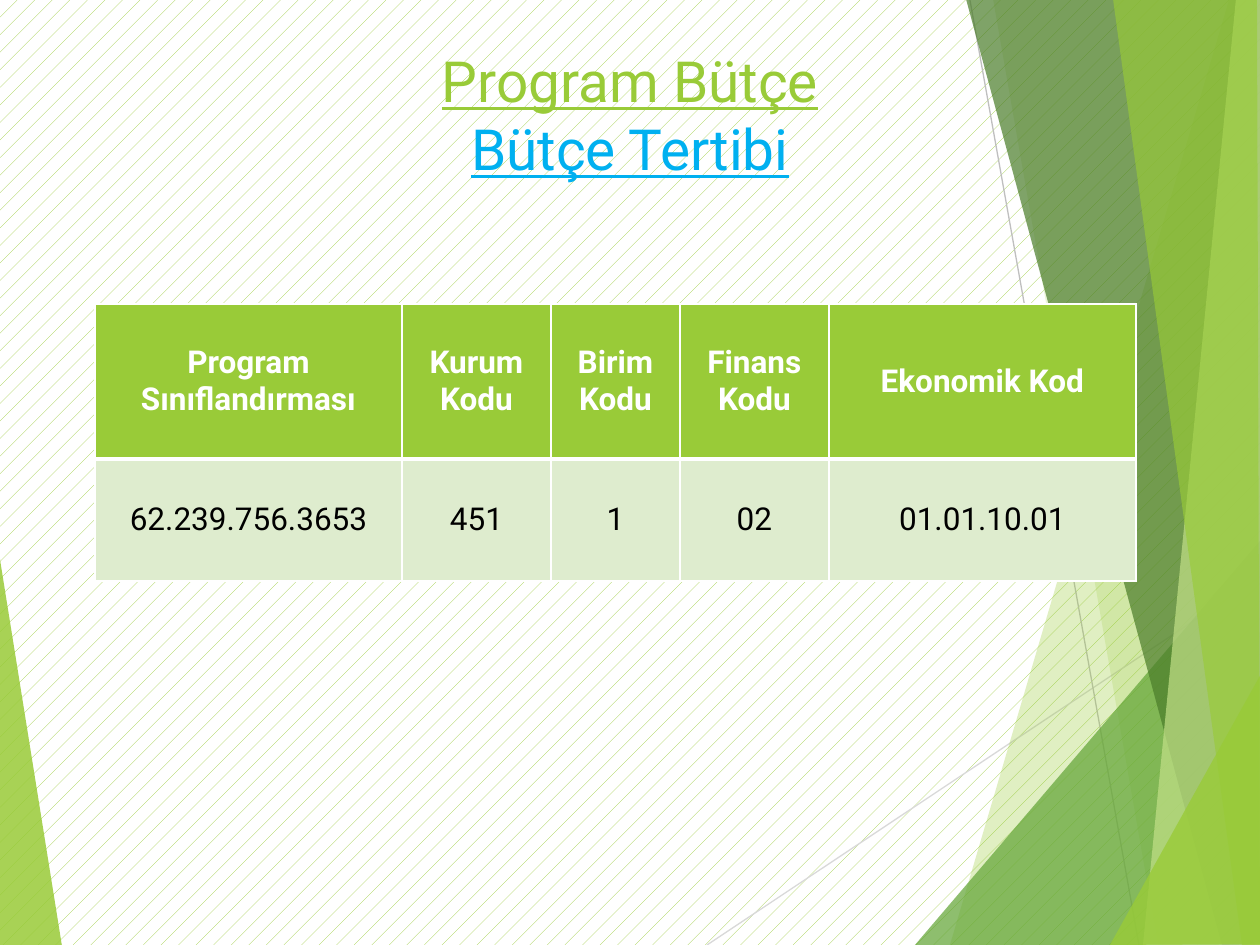
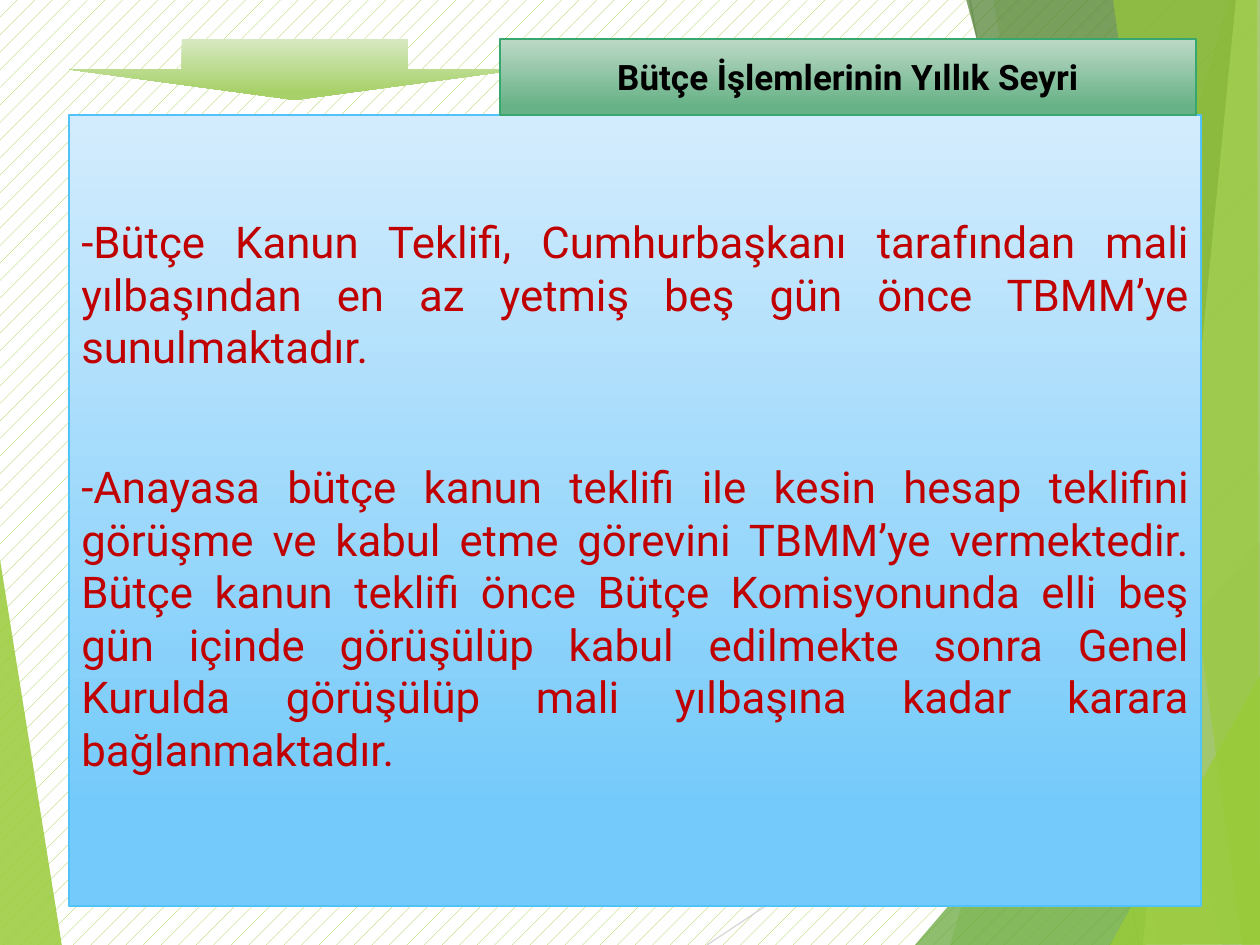
from lxml import etree
from pptx import Presentation
from pptx.dml.color import RGBColor
from pptx.enum.dml import MSO_PATTERN
from pptx.enum.shapes import MSO_CONNECTOR, MSO_SHAPE
from pptx.enum.text import MSO_ANCHOR, PP_ALIGN
from pptx.oxml.ns import qn
from pptx.util import Pt

PX = 914400 / 126
FONT = "Roboto"
RECT, ARROW = MSO_SHAPE.RECTANGLE, MSO_SHAPE.DOWN_ARROW
LINE = MSO_CONNECTOR.STRAIGHT
TOP, MID = MSO_ANCHOR.TOP, MSO_ANCHOR.MIDDLE
CENTER, JUSTIFY = PP_ALIGN.CENTER, PP_ALIGN.JUSTIFY
DOTS = MSO_PATTERN.PERCENT_5

LIME = RGBColor(0x99, 0xCB, 0x38)
GREEN = RGBColor(0x63, 0xA5, 0x37)
MOSS = RGBColor(0x4A, 0x7C, 0x29)
PALE = RGBColor(0xC2, 0xE0, 0x88)
MINT = RGBColor(0xDE, 0xEC, 0xCE)
SKY = RGBColor(0x00, 0xB0, 0xF0)
RED = RGBColor(0xC0, 0x00, 0x00)
BLACK = RGBColor(0, 0, 0)
WHITE = RGBColor(0xFF, 0xFF, 0xFF)
SILVER = RGBColor(0xD9, 0xD9, 0xD9)
GREY = RGBColor(0xBF, 0xBF, 0xBF)
BLUES = RGBColor(0xD3, 0xEC, 0xFD), RGBColor(0x74, 0xCA, 0xFA)
LIMES = RGBColor(0xD7, 0xE9, 0xC2), RGBColor(0xA7, 0xD1, 0x68)
TEALS = RGBColor(0xBD, 0xD9, 0xC7), RGBColor(0x68, 0xB2, 0x87)
BLUE_EDGE = RGBColor(0x51, 0xC3, 0xF9)
TEAL_EDGE = RGBColor(0x37, 0xA7, 0x6F)

# Facets of the backdrop: colour, opacity in percent, corners
LEFT = (LIME, 85, [(-1, 553), (62, 946), (-1, 945)])
RIGHT = [
    (LIME, 30, [(1229, 0), (950, 945), (1262, 946), (1261, 0)]),
    (LIME, 20, [(993, -1), (1158, 945), (1261, 945), (1261, -1)]),
    (GREEN, 72, [(915, 945), (1260, 541), (1261, 945)]),
    (MOSS, 70, [(966, -1), (1222, 945), (1261, 944), (1261, -1)]),
    (PALE, 70, [(1236, -1), (1143, 945), (1261, 945), (1260, -1)]),
    (LIME, 65, [(1113, -1), (1242, 945), (1260, 945), (1257, -1)]),
    (LIME, 80, [(1110, 945), (1261, 674), (1261, 944)]),
]


def emu(*sizes):
    return [round(size * PX) for size in sizes]


class Deck:
    def __init__(self):
        self.prs = Presentation()
        self.prs.slide_width, self.prs.slide_height = emu(1260, 945)

    def page(self):
        """Start a slide with the shared backdrop."""
        self.slide = self.prs.slides.add_slide(self.prs.slide_layouts[6])
        self.shapes = self.slide.shapes
        fill = self.slide.background.fill
        fill.patterned()
        fill.pattern = DOTS
        fill.fore_color.rgb, fill.back_color.rgb = LIME, WHITE
        self.facet(*LEFT)
        self.line(707, 945, 1261, 576, SILVER)
        self.line(970, 0, 1139, 945, GREY)
        for part in RIGHT:
            self.facet(*part)

    def facet(self, color, alpha, points):
        first, *rest = points
        form = self.shapes.build_freeform(*first, scale=PX)
        form.add_line_segments(rest)
        shape = form.convert_to_shape()
        shape.shadow.inherit = False
        shape.line.fill.background()
        shape.fill.solid()
        shape.fill.fore_color.rgb = color
        tint = shape.fill._xPr.find(".//" + qn("a:srgbClr"))
        etree.SubElement(tint, qn("a:alpha"), val=str(alpha * 1000))

    def line(self, x1, y1, x2, y2, color):
        line = self.shapes.add_connector(LINE, *emu(x1, y1, x2, y2))
        line.line.color.rgb = color
        line.line.width = Pt(0.75)
        etree.SubElement(line._element.spPr, qn("a:effectLst"))

    def run(self, para, text, size, color, bold=False, under=False):
        run = para.add_run()
        run.text = text
        font = run.font
        font.name, font.size, font.bold = FONT, Pt(size), bold
        font.underline = under
        font.color.rgb = color

    def title(self, lines):
        """Centred underlined title; lines holds (text, colour) pairs."""
        frame = self.shapes.add_textbox(*emu(63, 40, 1134, 236)).text_frame
        frame.word_wrap = True
        para = frame.paragraphs[0]
        para.alignment = CENTER
        for row, (text, color) in enumerate(lines):
            if row:
                para.add_line_break()
            self.run(para, text, 32.4, color, under=True)

    def block(self, kind, box, shades, edge=None):
        """Shape with a top-to-bottom gradient."""
        shape = self.shapes.add_shape(kind, *emu(*box))
        shape.shadow.inherit = False
        fill = shape.fill
        fill.gradient()
        fill.gradient_angle = 270
        for stop, shade, spot in zip(fill.gradient_stops, shades, (0, 0.88)):
            stop.color.rgb, stop.position = shade, spot
        if edge:
            shape.line.color.rgb = edge
            shape.line.width = Pt(1)
        else:
            shape.line.fill.background()
        return shape

    def fit(self, shape, texts, size, color, align, anchor, inset=6, gap=0,
            bold=False):
        """Write paragraphs into a shape, gap points apart."""
        frame = shape.text_frame
        frame.word_wrap = True
        frame.vertical_anchor = anchor
        frame.margin_top, = emu(inset)
        for row, text in enumerate(texts):
            para = frame.add_paragraph() if row else frame.paragraphs[0]
            para.alignment = align
            if row:
                para.space_before = Pt(gap)
            self.run(para, text, size, color, bold)

    def edges(self, cell, base):
        """White cell borders; base is the bottom width in points."""
        props = cell._tc.get_or_add_tcPr()
        for side, width in zip("LRTB", (1, 1, 1, base)):
            edge = etree.SubElement(props, qn("a:ln" + side),
                                    w=str(Pt(width)))
            fill = etree.SubElement(edge, qn("a:solidFill"))
            etree.SubElement(fill, qn("a:srgbClr"), val=str(WHITE))

    def table(self, x, y, wides, highs, rows):
        box = emu(x, y, sum(wides), sum(highs))
        table = self.shapes.add_table(len(rows), len(wides), *box).table
        table.horz_banding = False
        for col, wide in zip(table.columns, emu(*wides)):
            col.width = wide
        for row, high in zip(table.rows, emu(*highs)):
            row.height = high
        for r, texts in enumerate(rows):
            head = r == 0
            for c, text in enumerate(texts):
                cell = table.cell(r, c)
                self.edges(cell, 3 if head else 1)
                cell.fill.solid()
                cell.fill.fore_color.rgb = LIME if head else MINT
                cell.vertical_anchor = MID
                para = cell.text_frame.paragraphs[0]
                para.alignment = CENTER
                self.run(para, text, 18, WHITE if head else BLACK, head)


def code_page(deck):
    deck.page()
    deck.title([("Program Bütçe", LIME), ("Bütçe Tertibi", SKY)])
    deck.table(95, 304, [307, 149, 129, 149, 307], [155, 122], [
        ["Program Sınıflandırması", "Kurum Kodu", "Birim Kodu",
         "Finans Kodu", "Ekonomik Kod"],
        ["62.239.756.3653", "451", "1", "02", "01.01.10.01"],
    ])


def year_page(deck):
    deck.page()
    body = deck.block(RECT, (69, 115, 1132, 791), BLUES, BLUE_EDGE)
    deck.fit(body, [
        "-Bütçe Kanun Teklifi, Cumhurbaşkanı tarafından mali yılbaşından "
        "en az yetmiş beş gün önce TBMM’ye sunulmaktadır.",
        "-Anayasa bütçe kanun teklifi ile kesin hesap teklifini görüşme ve "
        "kabul etme görevini TBMM’ye vermektedir. Bütçe kanun teklifi önce "
        "Bütçe Komisyonunda elli beş gün içinde görüşülüp kabul edilmekte "
        "sonra Genel Kurulda görüşülüp mali yılbaşına kadar karara "
        "bağlanmaktadır.",
    ], 25, RED, JUSTIFY, TOP, inset=100, gap=50)
    deck.block(ARROW, (69, 39, 452, 61), LIMES)
    band = deck.block(RECT, (500, 39, 696, 76), TEALS, TEAL_EDGE)
    deck.fit(band, ["Bütçe İşlemlerinin Yıllık Seyri"], 20, BLACK, CENTER,
             MID, bold=True)


def main():
    deck = Deck()
    code_page(deck)
    year_page(deck)
    deck.prs.save("out.pptx")


if __name__ == "__main__":
    main()
